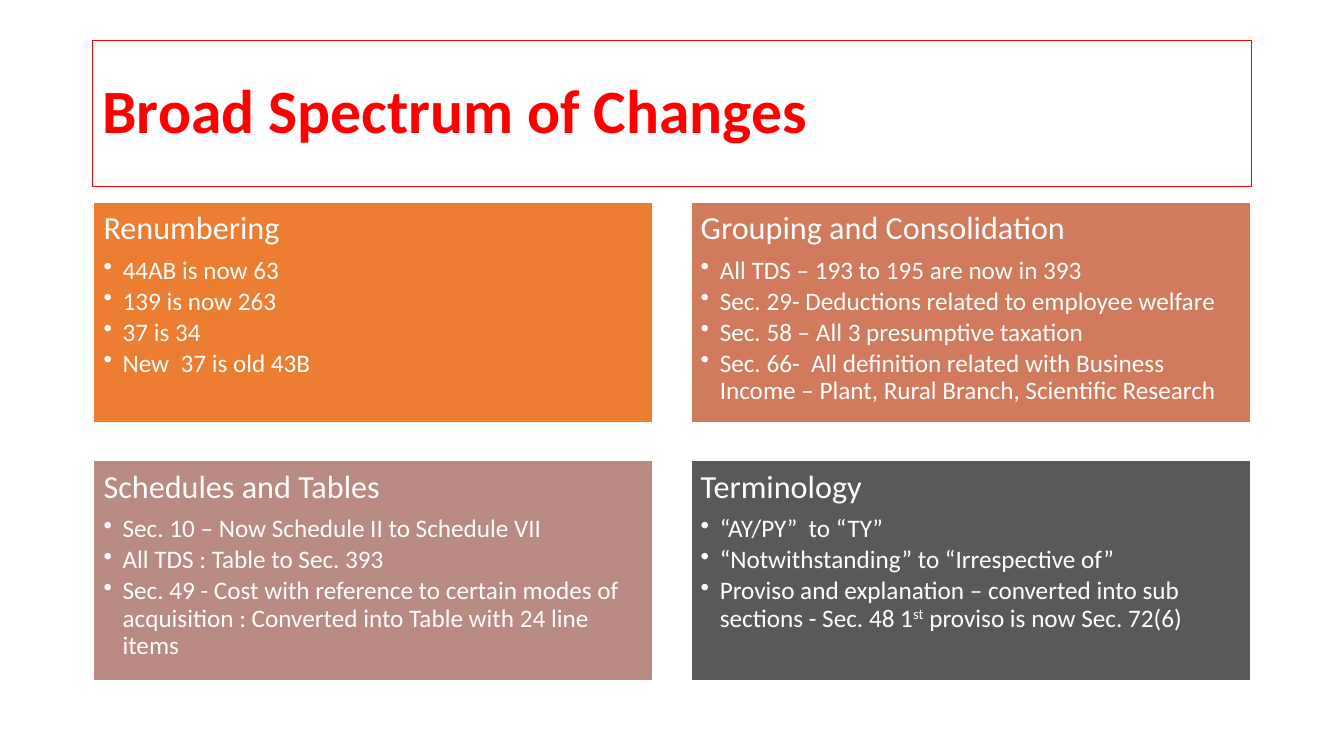
from dataclasses import dataclass

import pptx
import pptx.dml.color
import pptx.enum.shapes
import pptx.enum.text
import pptx.oxml
import pptx.oxml.ns
import pptx.presentation
import pptx.shapes.autoshape
import pptx.slide
import pptx.text.text
import pptx.util

Cm = pptx.util.Cm
Pt = pptx.util.Pt
RGBColor = pptx.dml.color.RGBColor

FONT = "Calibri"
RED = RGBColor(0xFF, 0x00, 0x00)
WHITE = RGBColor(0xFF, 0xFF, 0xFF)
ORANGE = RGBColor(0xED, 0x7D, 0x31)
TERRACOTTA = RGBColor(0xD1, 0x7B, 0x5C)
DUSTY_ROSE = RGBColor(0xB9, 0x8A, 0x82)
DARK_GREY = RGBColor(0x59, 0x59, 0x59)

COLUMNS = 2
GRID_LEFT, GRID_TOP = 2.36, 5.09
CARD_WIDTH, CARD_HEIGHT = 14.1, 5.56
GAP = 0.95
CARD_INSET = Cm(0.25)
BULLET_INDENT = Cm(0.48)


@dataclass(frozen=True)
class Card:
    heading: str
    fill: RGBColor
    bullets: tuple[str, ...]


# Text between two carets is superscript.
CARDS = (
    Card("Renumbering", ORANGE, (
        "44AB is now 63",
        "139 is now 263",
        "37 is 34",
        "New  37 is old 43B",
    )),
    Card("Grouping and Consolidation", TERRACOTTA, (
        "All TDS – 193 to 195 are now in 393",
        "Sec. 29- Deductions related to employee welfare",
        "Sec. 58 – All 3 presumptive taxation",
        "Sec. 66-  All definition related with Business Income – Plant, "
        "Rural Branch, Scientific Research",
    )),
    Card("Schedules and Tables", DUSTY_ROSE, (
        "Sec. 10 – Now Schedule II to Schedule VII",
        "All TDS : Table to Sec. 393",
        "Sec. 49 - Cost with reference to certain modes of acquisition : "
        "Converted into Table with 24 line items",
    )),
    Card("Terminology", DARK_GREY, (
        "“AY/PY”  to “TY”",
        "“Notwithstanding” to “Irrespective of”",
        "Proviso and explanation – converted into sub sections - "
        "Sec. 48 1^st^ proviso is now Sec. 72(6)",
    )),
)


def format_paragraph(paragraph: pptx.text.text._Paragraph, size: float,
                     color: RGBColor, space_after: float = 0) -> None:
    paragraph.alignment = pptx.enum.text.PP_ALIGN.LEFT
    paragraph.line_spacing = 0.9
    paragraph.space_after = Pt(space_after)
    paragraph.font.name = FONT
    paragraph.font.size = Pt(size)
    paragraph.font.color.rgb = color


def add_bullet(paragraph: pptx.text.text._Paragraph, text: str) -> None:
    paragraph.level = 1
    properties = paragraph._p.get_or_add_pPr()
    properties.set("marL", str(BULLET_INDENT))
    properties.set("indent", str(-BULLET_INDENT))
    properties.append(pptx.oxml.parse_xml(
        f'<a:buChar {pptx.oxml.ns.nsdecls("a")} char="•"/>'))
    for index, part in enumerate(text.split("^")):
        run = paragraph.add_run()
        run.text = part
        if index % 2:
            run.font._element.set("baseline", "30000")
    format_paragraph(paragraph, 18, WHITE, 2.7)


def add_title(slide: pptx.slide.Slide, text: str) -> None:
    title = slide.shapes.add_textbox(Cm(2.33), Cm(1.01), Cm(29.21), Cm(3.68))
    title.line.color.rgb = RED
    title.line.width = Pt(0.25)
    frame = title.text_frame
    frame.word_wrap = True
    frame.vertical_anchor = pptx.enum.text.MSO_ANCHOR.MIDDLE
    paragraph = frame.paragraphs[0]
    paragraph.text = text
    format_paragraph(paragraph, 44, RED)
    paragraph.font.bold = True


def add_card(slide: pptx.slide.Slide, card: Card, left: float, top: float) -> None:
    shape = slide.shapes.add_shape(
        pptx.enum.shapes.MSO_SHAPE.RECTANGLE,
        Cm(left), Cm(top), Cm(CARD_WIDTH), Cm(CARD_HEIGHT))
    shape.shadow.inherit = False
    shape.fill.solid()
    shape.fill.fore_color.rgb = card.fill
    shape.line.color.rgb = WHITE
    shape.line.width = Pt(1)

    frame = shape.text_frame
    frame.word_wrap = True
    frame.vertical_anchor = pptx.enum.text.MSO_ANCHOR.TOP
    frame.margin_left = frame.margin_right = CARD_INSET
    frame.margin_top = frame.margin_bottom = CARD_INSET
    heading = frame.paragraphs[0]
    heading.text = card.heading
    format_paragraph(heading, 23, WHITE, 8)
    for bullet in card.bullets:
        add_bullet(frame.add_paragraph(), bullet)


def main() -> None:
    presentation = pptx.Presentation()
    presentation.slide_width = Cm(33.87)
    presentation.slide_height = Cm(19.05)
    slide = presentation.slides.add_slide(presentation.slide_layouts[6])
    add_title(slide, "Broad Spectrum of Changes")
    for index, card in enumerate(CARDS):
        row, column = divmod(index, COLUMNS)
        add_card(slide, card,
                 GRID_LEFT + column * (CARD_WIDTH + GAP),
                 GRID_TOP + row * (CARD_HEIGHT + GAP))
    presentation.save("out.pptx")


if __name__ == "__main__":
    main()
